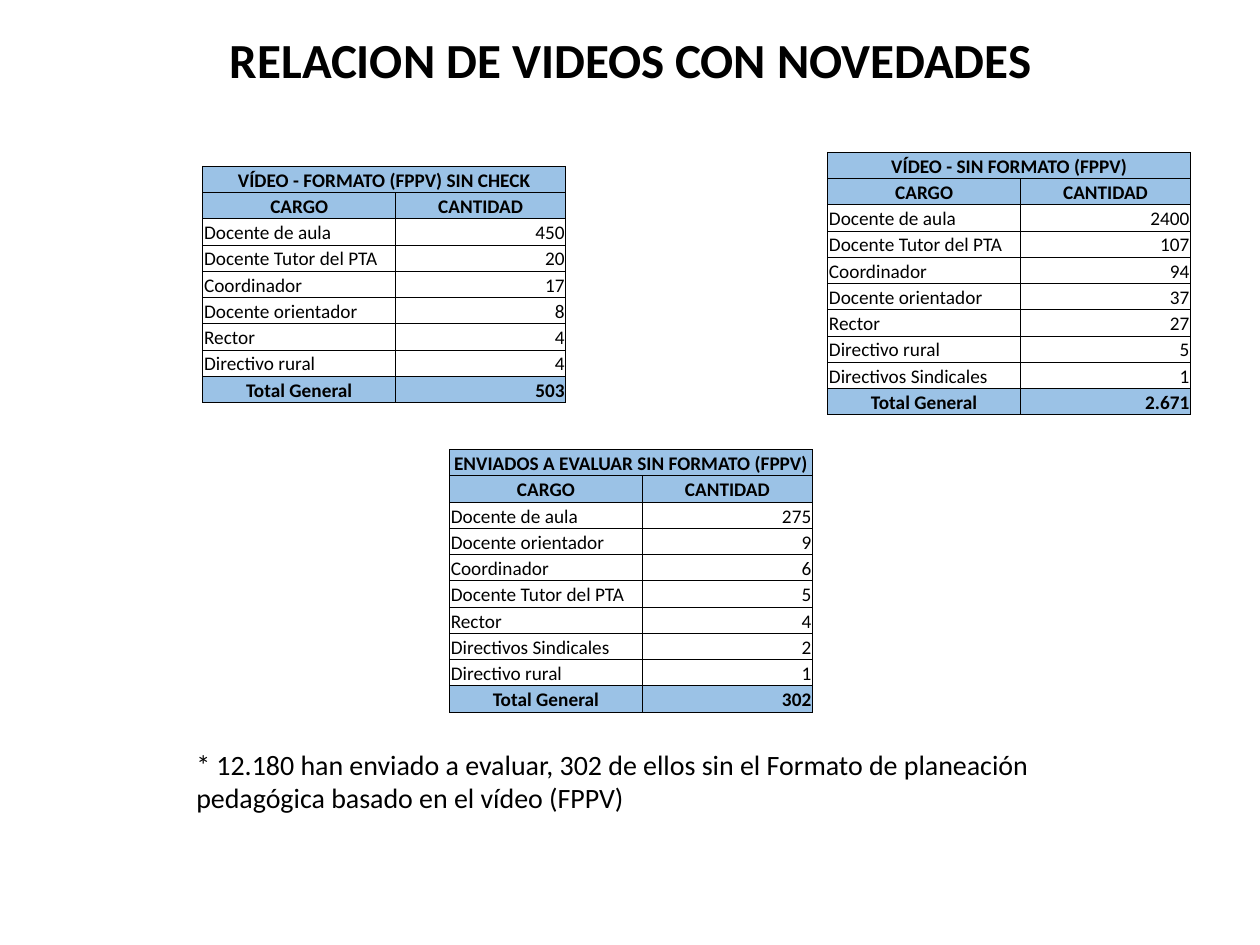
"""Build the slide that sums up the videos with reported issues."""
from lxml import etree
from pptx import Presentation
from pptx.dml.color import RGBColor
from pptx.enum.shapes import MSO_SHAPE
from pptx.enum.text import MSO_ANCHOR, PP_ALIGN
from pptx.oxml.ns import qn
from pptx.util import Pt

LEFT, CENTER, RIGHT = PP_ALIGN.LEFT, PP_ALIGN.CENTER, PP_ALIGN.RIGHT
MIDDLE, BOTTOM = MSO_ANCHOR.MIDDLE, MSO_ANCHOR.BOTTOM
ROUNDED = MSO_SHAPE.ROUND_2_DIAG_RECTANGLE

FONT = "Calibri"
COLORS = {"text": "000000", "band": "9BC2E6", "border": "000000", "title": "FFFFFF"}
COL_WIDTHS = (110.2, 97.2)
ROW_HEIGHT = 15
BORDER_WIDTH = 0.5

TABLES = [
    (115.9, 95, "VÍDEO - FORMATO (FPPV) SIN CHECK", [
        ("Docente de aula", "450"),
        ("Docente Tutor del PTA", "20"),
        ("Coordinador", "17"),
        ("Docente orientador", "8"),
        ("Rector", "4"),
        ("Directivo rural", "4"),
    ], "503"),
    (473, 87, "VÍDEO - SIN FORMATO (FPPV)", [
        ("Docente de aula", "2400"),
        ("Docente Tutor del PTA", "107"),
        ("Coordinador", "94"),
        ("Docente orientador", "37"),
        ("Rector", "27"),
        ("Directivo rural", "5"),
        ("Directivos Sindicales", "1"),
    ], "2.671"),
    (256.9, 256.9, "ENVIADOS A EVALUAR SIN FORMATO (FPPV)", [
        ("Docente de aula", "275"),
        ("Docente orientador", "9"),
        ("Coordinador", "6"),
        ("Docente Tutor del PTA", "5"),
        ("Rector", "4"),
        ("Directivos Sindicales", "2"),
        ("Directivo rural", "1"),
    ], "302"),
]


def rgb(name):
    return RGBColor.from_string(COLORS[name])


def write(tf, text, size=11, bold=False, align=LEFT, color="text"):
    p = tf.paragraphs[0]
    p.alignment = align
    r = p.add_run()
    r.text = text
    r.font.name = FONT
    r.font.size = Pt(size)
    r.font.bold = bold
    r.font.color.rgb = rgb(color)


def add_title(s, text, x, y, w, h):
    sp = s.shapes.add_shape(ROUNDED, Pt(x), Pt(y), Pt(w), Pt(h))
    sp.shadow.inherit = False
    sp.fill.solid()
    sp.fill.fore_color.rgb = rgb("title")
    sp.line.fill.background()
    tf = sp.text_frame
    tf.word_wrap = True
    tf.vertical_anchor = MIDDLE
    write(tf, text, size=28, bold=True, align=CENTER)


def add_note(s, text, x, y, w, h):
    sp = s.shapes.add_textbox(Pt(x), Pt(y), Pt(w), Pt(h))
    sp.text_frame.word_wrap = True
    write(sp.text_frame, text, size=16)


def set_borders(cell):
    tc_pr = cell._tc.get_or_add_tcPr()
    for i, side in enumerate(("lnL", "lnR", "lnT", "lnB")):
        ln = etree.Element(qn(f"a:{side}"), w=str(Pt(BORDER_WIDTH)))
        fill = etree.SubElement(ln, qn("a:solidFill"))
        etree.SubElement(fill, qn("a:srgbClr"), val=COLORS["border"])
        tc_pr.insert(i, ln)


def fill_cell(cell, text, align, band):
    cell.margin_left = cell.margin_right = cell.margin_top = Pt(0.7)
    cell.margin_bottom = 0
    cell.vertical_anchor = BOTTOM
    if band:
        cell.fill.solid()
        cell.fill.fore_color.rgb = rgb("band")
    else:
        cell.fill.background()
    set_borders(cell)
    if text:
        write(cell.text_frame, text, bold=band, align=align)


def add_count_table(s, x, y, heading, counts, total):
    rows = [(heading, ""), ("CARGO", "CANTIDAD"), *counts, ("Total General", total)]
    last = len(rows) - 1
    frame = s.shapes.add_table(len(rows), 2, Pt(x), Pt(y),
                               Pt(sum(COL_WIDTHS)), Pt(ROW_HEIGHT * len(rows)))
    table = frame.table
    table.first_row = table.horz_banding = False
    for column, width in zip(table.columns, COL_WIDTHS):
        column.width = Pt(width)
    table.cell(0, 0).merge(table.cell(0, 1))
    for i, (role, count) in enumerate(rows):
        table.rows[i].height = Pt(ROW_HEIGHT)
        band = i < 2 or i == last
        fill_cell(table.cell(i, 0), role, CENTER if band else LEFT, band)
        fill_cell(table.cell(i, 1), count, CENTER if i < 2 else RIGHT, band)


def main():
    prs = Presentation()
    prs.slide_width, prs.slide_height = Pt(720), Pt(540)
    s = prs.slides.add_slide(prs.slide_layouts[6])
    add_title(s, "RELACION DE VIDEOS CON NOVEDADES", 0.7, 15.1, 719.3, 36.7)
    add_note(s, "* 12.180 han enviado a evaluar, 302 de ellos sin el Formato de "
                "planeación pedagógica basado en el vídeo (FPPV)", 105.1, 423.4, 547.2, 46)
    for table in TABLES:
        add_count_table(s, *table)
    prs.save("out.pptx")


if __name__ == "__main__":
    main()
